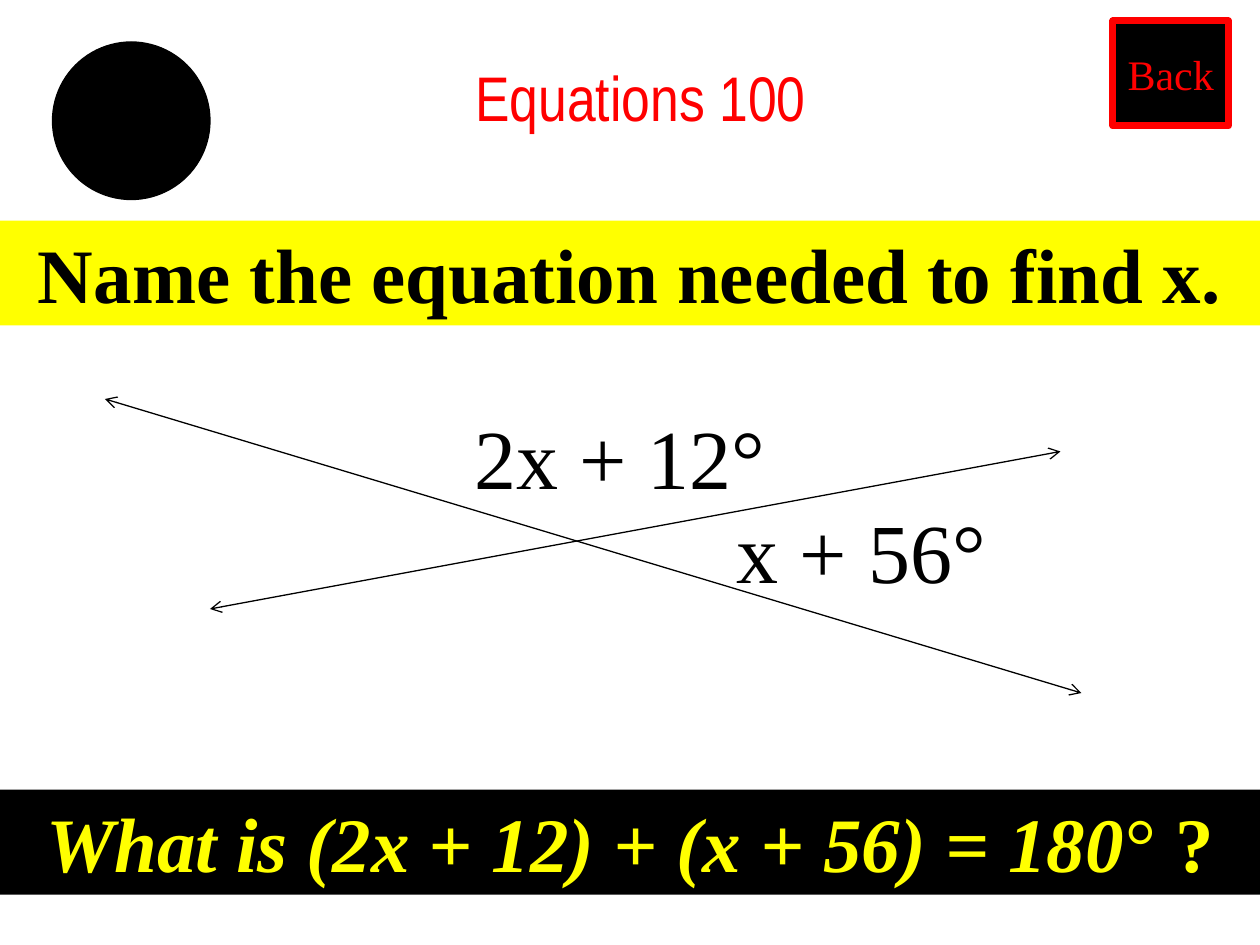
import lxml.etree
import pptx
import pptx.dml.color
import pptx.enum.shapes
import pptx.enum.text
import pptx.oxml.ns
import pptx.util

COLORS = {"ink": "000000", "paper": "FFFFFF", "red": "FF0000", "yellow": "FFFF00"}
COLUMNS, ROWS = 120, 90
UNIT = pptx.util.Inches(10) // COLUMNS
SERIF = "Times New Roman"
PRESET = pptx.enum.shapes.MSO_SHAPE
ANCHOR = pptx.enum.text.MSO_ANCHOR
CENTER = pptx.enum.text.PP_ALIGN.CENTER
FIT = pptx.enum.text.MSO_AUTO_SIZE.SHAPE_TO_FIT_TEXT


def rgb(name):
    """Return the named palette colour."""
    return pptx.dml.color.RGBColor.from_string(COLORS[name])


def grid(*cells):
    """Turn grid cells into lengths."""
    return [pptx.util.Emu(round(cell * UNIT)) for cell in cells]


def inside(box, left, top, width, height):
    """Move a part into the box that holds it."""
    return box[0] + left, box[1] + top, width, height


def apply(target, values):
    """Set each attribute from a dict of format values."""
    for name, value in values.items():
        setattr(target, name, value)


def write(shape, runs, color, size, font=SERIF, align=None, lead=False, **frame):
    """Write one paragraph from pairs of text and font values."""
    apply(shape.text_frame, frame)
    paragraph = shape.text_frame.paragraphs[0]
    paragraph.alignment = align
    if lead:
        properties = paragraph._p.get_or_add_pPr()
        before = lxml.etree.SubElement(properties, pptx.oxml.ns.qn("a:spcBef"))
        lxml.etree.SubElement(before, pptx.oxml.ns.qn("a:spcPct"), val="50000")
    for text, style in runs:
        run = paragraph.add_run()
        run.text = text
        apply(run.font, {"name": font, "size": pptx.util.Pt(size), **style})
        run.font.color.rgb = rgb(color)


def add_block(slide, preset, box, fill, line=None, weight=0.75):
    """Add a filled preset shape with an optional outline."""
    block = slide.shapes.add_shape(preset, *grid(*box))
    block.shadow.inherit = False
    block.fill.solid()
    block.fill.fore_color.rgb = rgb(fill)
    if line:
        block.line.color.rgb = rgb(line)
        block.line.width = pptx.util.Pt(weight)
    else:
        block.line.fill.background()
    return block


def add_header(slide, box):
    """Place the category title, the disc and the back button."""
    title = slide.shapes.add_textbox(*grid(*inside(box, 31, 5, 60, 7.4)))
    write(title, [("Equations 100", {})], "red", 36, "Arial Narrow", CENTER, word_wrap=False)
    add_block(slide, PRESET.OVAL, inside(box, 5, 4, 15, 15), "ink", "ink")
    back = add_block(slide, PRESET.RECTANGLE, inside(box, 106, 2, 11, 10), "ink", "red", 4)
    write(back, [("Back", {})], "red", 24, align=CENTER, word_wrap=False,
          vertical_anchor=ANCHOR.MIDDLE)


def add_band(slide, box, fill, color, runs):
    """Place a full-width band of large text."""
    band = add_block(slide, PRESET.RECTANGLE, box, fill)
    write(band, runs, color, 44, align=CENTER, lead=True, word_wrap=True,
          auto_size=FIT, vertical_anchor=ANCHOR.TOP)


def add_ray_pair(slide, box, start, end):
    """Draw a line with an open arrowhead at each end."""
    points = [box[0] + start[0], box[1] + start[1], box[0] + end[0], box[1] + end[1]]
    ray = slide.shapes.add_connector(pptx.enum.shapes.MSO_CONNECTOR.STRAIGHT, *grid(*points))
    ray.line.color.rgb = rgb("ink")
    ray.line.width = pptx.util.Pt(0.75)
    outline = ray.line._get_or_add_ln()
    for tip in ("a:headEnd", "a:tailEnd"):
        lxml.etree.SubElement(outline, pptx.oxml.ns.qn(tip), type="arrow")
    lxml.etree.SubElement(ray._element.spPr, pptx.oxml.ns.qn("a:effectLst"))


def add_diagram(slide, box):
    """Place the crossing lines and their angle labels."""
    for start, end in (((0, 0), (93, 28)), ((10, 20), (91, 5))):
        add_ray_pair(slide, box, start, end)
    for label, left, top in (("2x + 12°", 34, 0), ("x + 56°", 59, 9)):
        angle = slide.shapes.add_textbox(*grid(*inside(box, left, top, 37, 10.8)))
        write(angle, [(label, {})], "ink", 48, lead=True, word_wrap=True, auto_size=FIT)


def main():
    """Build and save the question slide."""
    deck = pptx.Presentation()
    apply(deck, {"slide_width": UNIT * COLUMNS, "slide_height": UNIT * ROWS})
    slide = deck.slides.add_slide(deck.slide_layouts[6])
    slide.background.fill.solid()
    slide.background.fill.fore_color.rgb = rgb("paper")
    bold = {"bold": True}
    add_header(slide, (0, 0, COLUMNS, 21))
    add_band(slide, (0, 21, COLUMNS, 10), "yellow", "ink",
             [("Name the equation needed to find x.", bold)])
    add_band(slide, (0, 75.2, COLUMNS, 10), "ink", "yellow",
             [("What is (2x + 12) + (x + 56) = 180", {"bold": True, "italic": True}),
              ("° ", {}), ("?", bold)])
    add_diagram(slide, (10, 38, 93, 28))
    deck.save("out.pptx")


if __name__ == "__main__":
    main()
